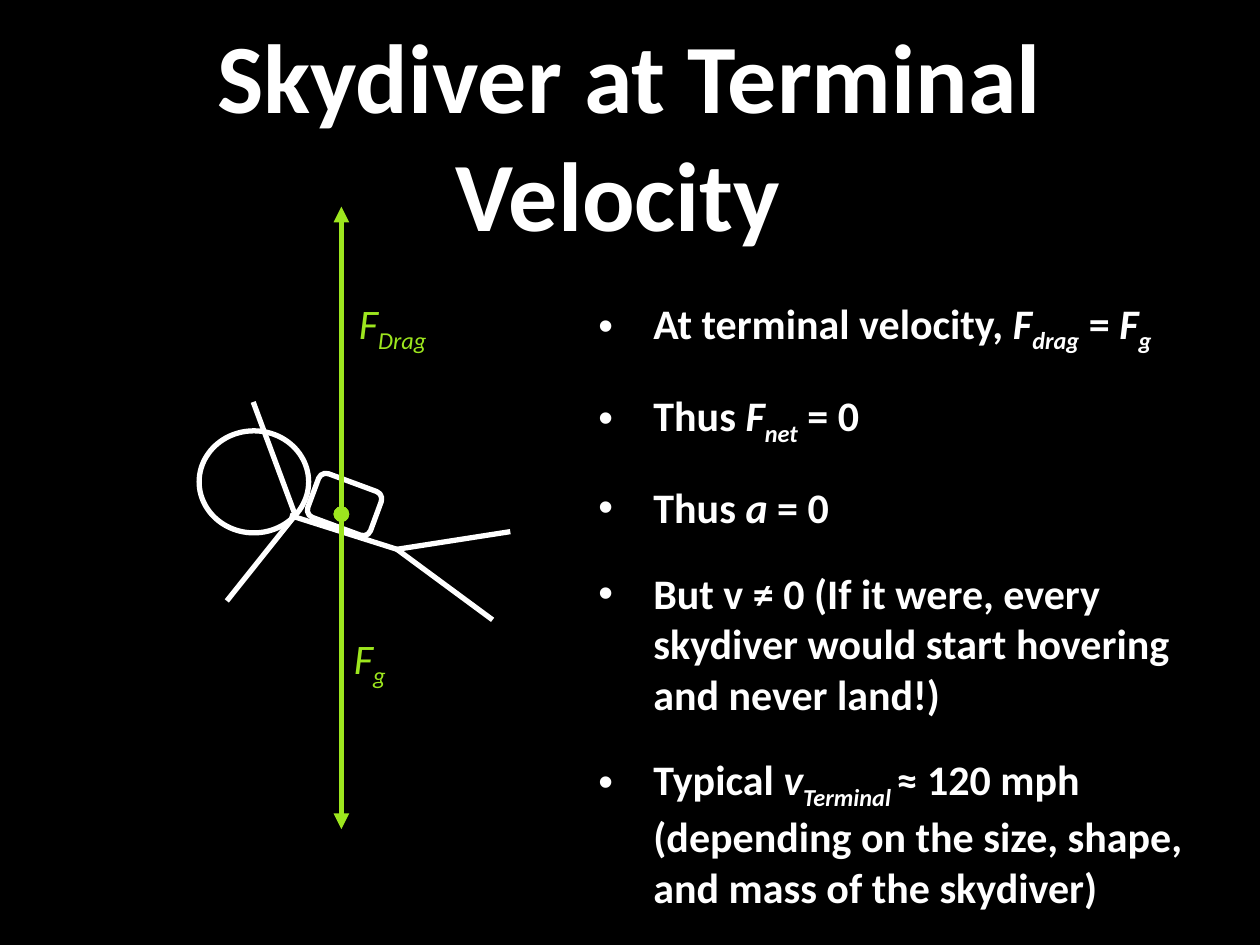
from lxml import etree
from pptx import Presentation
from pptx.dml.color import RGBColor
from pptx.enum.shapes import MSO_CONNECTOR, MSO_SHAPE
from pptx.enum.text import MSO_ANCHOR, MSO_AUTO_SIZE, PP_ALIGN
from pptx.oxml.ns import qn
from pptx.util import Pt

STRAIGHT = MSO_CONNECTOR.STRAIGHT
ELLIPSE, ROUNDED = MSO_SHAPE.OVAL, MSO_SHAPE.ROUNDED_RECTANGLE
CENTER, MIDDLE = PP_ALIGN.CENTER, MSO_ANCHOR.MIDDLE
NO_AUTOFIT = MSO_AUTO_SIZE.NONE

COLORS = {"background": "000000", "body": "FFFFFF", "force": "9DE61E"}
PLAIN, ITALIC, SUBSCRIPT = "plain", "italic", "subscript"

POINTS = [
    [("At terminal velocity, ", PLAIN), ("F", ITALIC), ("drag", SUBSCRIPT),
     (" = ", PLAIN), ("F", ITALIC), ("g", SUBSCRIPT)],
    [("Thus ", PLAIN), ("F", ITALIC), ("net", SUBSCRIPT), (" = 0", PLAIN)],
    [("Thus ", PLAIN), ("a", ITALIC), (" = 0", PLAIN)],
    [("But v ≠ 0 (If it were, every skydiver would start hovering "
      "and never land!)", PLAIN)],
    [("Typical ", PLAIN), ("v", ITALIC), ("Terminal ", SUBSCRIPT),
     ("≈ 120 mph (depending on the size, shape, and mass of the skydiver)",
      PLAIN)],
]

HIP = (226.8, 313.9)
LIMBS = [
    ((291.6, 303.8), HIP),
    ((169.2, 293.8), (129.6, 496.8 - 153.4)),
    ((168.5, 293.8), (144.7, 229.7)),
    ((165.6, 294.5), HIP),
    (HIP, (281.5, 354.2)),
]
LIMBS[1] = (LIMBS[1][0], (129.6, 343.4))
CENTER_OF_MASS = (195.1, 293.8)
FORCE_ENDS = [(195.1, 473.8), (195.1, 118.1)]


class SlideBuilder:
    font_name = "Calibri"
    text_size = 24
    line_width = 3

    def __init__(self, slide):
        self.slide = slide
        fill = slide.background.fill
        fill.solid()
        fill.fore_color.rgb = self.color("background")

    @staticmethod
    def color(name):
        return RGBColor.from_string(COLORS[name])

    def style_font(self, font, size, color, bold):
        font.name = self.font_name
        font.size = Pt(size)
        font.bold = bold
        font.color.rgb = self.color(color)

    def title(self, text, left, top, width, height):
        shape = self.slide.shapes.title
        shape.left, shape.top = Pt(left), Pt(top)
        shape.width, shape.height = Pt(width), Pt(height)
        frame = shape.text_frame
        frame.text = text
        frame.word_wrap = True
        frame.auto_size = NO_AUTOFIT
        frame.vertical_anchor = MIDDLE
        paragraph = frame.paragraphs[0]
        paragraph.alignment = CENTER
        self.style_font(paragraph.runs[0].font, 56, "body", True)

    def text_box(self, left, top, width, height):
        box = self.slide.shapes.add_textbox(
            Pt(left), Pt(top), Pt(width), Pt(height))
        box.text_frame.word_wrap = True
        return box.text_frame

    def formula_text(self, paragraph, parts, color, bold):
        """Add runs, with italic symbols and lowered italic indices."""
        for text, kind in parts:
            run = paragraph.add_run()
            run.text = text
            self.style_font(run.font, self.text_size, color, bold)
            run.font.italic = kind != PLAIN
            if kind == SUBSCRIPT:
                run.font._element.set("baseline", "-25000")

    def bullets(self, points, left, top, width, height):
        frame = self.text_box(left, top, width, height)
        for index, parts in enumerate(points):
            paragraph = frame.add_paragraph() if index else frame.paragraphs[0]
            properties = paragraph._p.get_or_add_pPr()
            indent = Pt(31.5)
            properties.set("marL", str(indent))
            properties.set("indent", str(-indent))
            etree.SubElement(properties, qn("a:buFont"), typeface="Arial")
            etree.SubElement(properties, qn("a:buChar"), char="•")
            if index:
                paragraph.space_before = Pt(20)
            self.formula_text(paragraph, parts, "body", True)

    def force_label(self, index, left, top, width, height):
        frame = self.text_box(left, top, width, height)
        parts = [("F", ITALIC), (index, SUBSCRIPT)]
        self.formula_text(frame.paragraphs[0], parts, "force", False)

    def line(self, start, end, color="body"):
        connector = self.slide.shapes.add_connector(
            STRAIGHT, *(Pt(value) for value in start + end))
        connector.line.color.rgb = self.color(color)
        connector.line.width = Pt(self.line_width)
        etree.SubElement(connector._element.spPr, qn("a:effectLst"))
        return connector

    def force_arrow(self, start, end):
        line = self.line(start, end, "force").line._get_or_add_ln()
        etree.SubElement(line, qn("a:headEnd"), type="oval")
        etree.SubElement(line, qn("a:tailEnd"), type="triangle")

    def outline(self, kind, left, top, width, height, rotation=0):
        shape = self.slide.shapes.add_shape(
            kind, Pt(left), Pt(top), Pt(width), Pt(height))
        shape.shadow.inherit = False
        shape.rotation = rotation
        shape.fill.background()
        shape.line.color.rgb = self.color("body")
        shape.line.width = Pt(self.line_width)


def main():
    presentation = Presentation()
    presentation.slide_width, presentation.slide_height = Pt(720), Pt(540)
    title_only = presentation.slide_layouts[5]
    builder = SlideBuilder(presentation.slides.add_slide(title_only))

    builder.title("Skydiver at Terminal Velocity ", 61.2, 8.6, 596.9, 135.4)
    builder.bullets(POINTS, 334.8, 166.3, 361.4, 352.8)

    for start, end in LIMBS:
        builder.line(start, end)
    builder.outline(ELLIPSE, 113.8, 246.2, 62.6, 58.3)
    builder.outline(ROUNDED, 177.8, 275, 38.2, 26.6, rotation=20.3)

    for end in FORCE_ENDS:
        builder.force_arrow(CENTER_OF_MASS, end)
    builder.force_label("Drag", 198, 166.3, 85.7, 36)
    builder.force_label("g", 195.1, 357.8, 43.2, 36)

    presentation.save("out.pptx")


if __name__ == "__main__":
    main()
